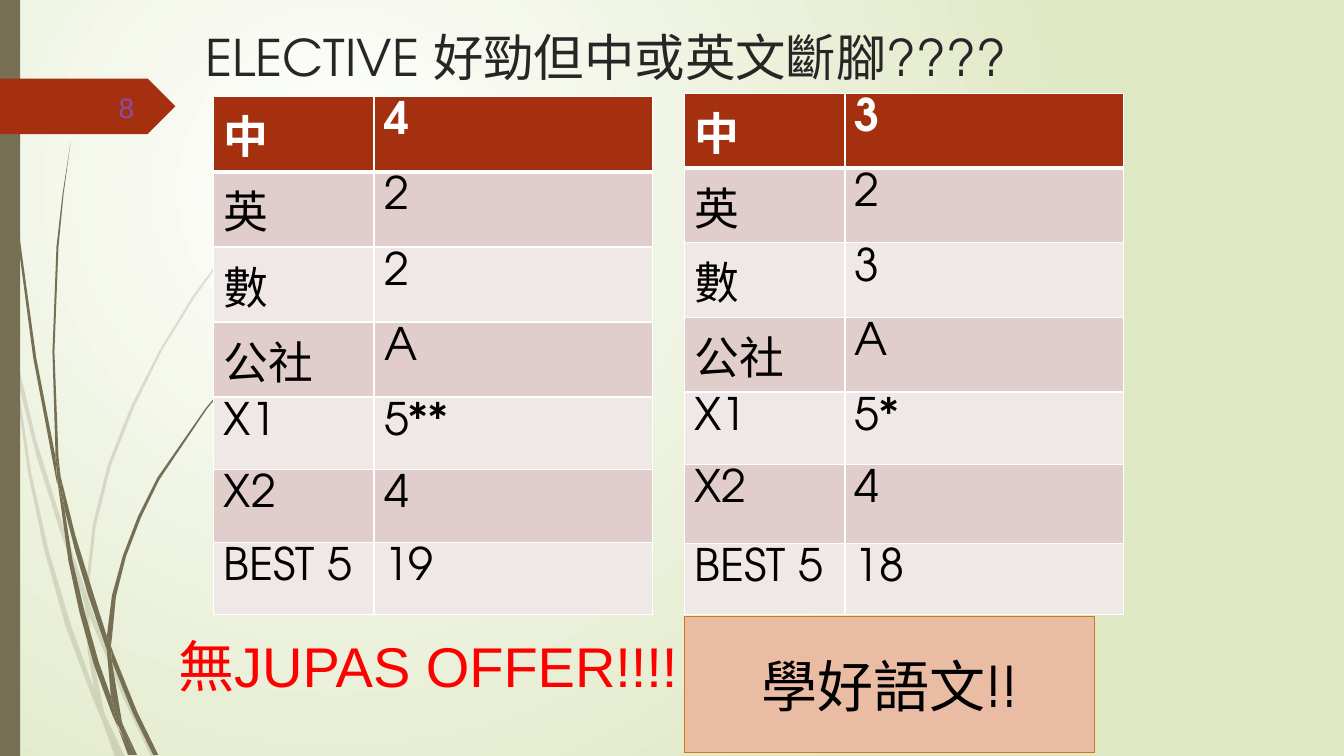
from dataclasses import dataclass

from lxml import etree
from pptx import Presentation
from pptx.dml.color import RGBColor
from pptx.enum.shapes import MSO_SHAPE
from pptx.enum.text import MSO_ANCHOR, PP_ALIGN
from pptx.oxml.ns import qn
from pptx.util import Inches, Pt

RECT, TAG = MSO_SHAPE.RECTANGLE, MSO_SHAPE.PENTAGON
TOP, MIDDLE = MSO_ANCHOR.TOP, MSO_ANCHOR.MIDDLE
LEFT, CENTER, RIGHT = PP_ALIGN.LEFT, PP_ALIGN.CENTER, PP_ALIGN.RIGHT


@dataclass(frozen=True)
class Theme:
    white: str = "FFFFFF"
    black: str = "000000"
    glow: str = "DFE8C4"
    stem: str = "766F54"
    rust: str = "A53010"
    dark: str = "E1CDCC"
    light: str = "F0E8E7"
    ink: str = "262626"
    purple: str = "874EA9"
    red: str = "FF0000"
    peach: str = "EBBCA4"
    orange: str = "D47817"
    head: str = "TeX Gyre Adventor"
    body: str = "Arial"
    big: int = 40
    title: int = 36
    cell: int = 32
    small: int = 20


T = Theme()

# Grass blades: corners of each outline
FAINT = [
    [(0.11, 3.5), (0.09, 3.22), (0, 2.82), (0, 2.99), (0.1, 3.44)],
    [(0.58, 5.22), (0.84, 5.99), (0.85, 5.86), (0.62, 5.2), (0.36, 4.37), (0.14, 3.45),
     (0.17, 3.76), (0.36, 4.52)],
    [(0.92, 6.07), (0.88, 5.96), (0.88, 6.1), (1.23, 6.94), (1.5, 7.51), (1.55, 7.51),
     (1.27, 6.92)],
    [(1.19, 7.51), (1.24, 7.51), (1.05, 7.11)],
    [(0.93, 6.83), (0.7, 6.19), (0.48, 5.45), (0.31, 4.69), (0.17, 3.76), (0.11, 3.5),
     (0.28, 4.7), (0.44, 5.46), (0.65, 6.21), (0.92, 6.93), (1.01, 7.14), (0.99, 7.07)],
    [(0.84, 5.99), (0.87, 6.46), (0.93, 6.83), (0.96, 6.92), (1.05, 7.11), (1.03, 7.06),
     (0.91, 6.46), (0.88, 6.08)],
    [(0.88, 5.84), (0.95, 5.22), (1.1, 4.62), (1.33, 4.04), (1.6, 3.49), (1.93, 2.95),
     (2.29, 2.45), (2.68, 1.98), (3.12, 1.54), (3.12, 1.53), (2.68, 1.97), (2.28, 2.44),
     (1.91, 2.94), (1.58, 3.48), (1.3, 4.03), (1.07, 4.61), (0.92, 5.21), (0.85, 5.84),
     (0.88, 5.96)],
    [(1.01, 7.14), (1.14, 7.51), (1.19, 7.51)],
    [(0.88, 6.08), (0.88, 5.96), (0.85, 5.86), (0.84, 5.99)],
    [(0.96, 6.92), (0.93, 6.83), (0.99, 7.07), (1.01, 7.14), (1.19, 7.51), (1.05, 7.11)],
]
BOLD = [
    [(0.07, 1.1), (0.17, 2.33), (0.33, 3.55), (0.56, 4.77), (0.57, 4.81), (0.55, 4.53),
     (0.36, 3.55), (0.19, 2.32), (0.08, 1.09), (0.05, 0.48), (0.04, 0), (0.03, 0),
     (0.04, 0.48)],
    [(0.88, 5.92), (1.06, 6.45), (1.06, 6.31), (0.93, 5.9), (0.75, 5.32), (0.6, 4.72),
     (0.64, 5.05), (0.75, 5.48)],
    [(1.13, 6.49), (1.1, 6.41), (1.11, 6.56), (1.32, 7.08), (1.52, 7.49), (1.57, 7.49),
     (1.36, 7.06)],
    [(1.1, 6.91), (0.98, 6.57), (0.84, 6.07), (0.72, 5.56), (0.64, 5.05), (0.57, 4.77),
     (0.68, 5.57), (0.79, 6.08), (0.93, 6.59), (1.11, 7.08), (1.17, 7.22), (1.16, 7.17)],
    [(0.6, 4.72), (0.58, 4.53), (0.54, 3.49), (0.58, 2.45), (0.63, 1.93), (0.7, 1.41),
     (0.62, 1.93), (0.56, 2.45), (0.52, 3.49), (0.55, 4.49)],
    [(1.33, 7.49), (1.36, 7.49), (1.22, 7.19)],
    [(0.57, 4.77), (0.64, 5.05), (0.6, 4.72), (0.55, 4.49), (0.55, 4.53)],
    [(1.11, 6.33), (1.15, 5.92), (1.25, 5.52), (1.4, 5.13), (1.58, 4.76), (2.05, 4.06),
     (2.31, 3.74), (2.61, 3.44), (2.6, 3.44), (2.31, 3.73), (2.04, 4.05), (1.56, 4.74),
     (1.37, 5.12), (1.22, 5.51), (1.11, 5.91), (1.06, 6.31), (1.1, 6.41)],
    [(1.17, 7.22), (1.27, 7.49), (1.31, 7.49)],
    [(1.06, 6.45), (1.1, 6.91), (1.16, 7.06), (1.22, 7.19), (1.21, 7.16), (1.11, 6.56),
     (1.09, 6.51)],
    [(1.06, 6.45), (1.11, 6.56), (1.1, 6.41), (1.06, 6.31)],
    [(1.16, 7.06), (1.1, 6.91), (1.16, 7.17), (1.3, 7.49), (1.33, 7.49), (1.22, 7.19)],
]

NAMES = ["中", "英", "數", "公社", "X1", "X2", "BEST 5"]
FIRST = ["4", "2", "2", "A", "5**", "4", "19"]
SECOND = ["3", "2", "3", "A", "5*", "4", "18"]


def rgb(color):
    return RGBColor.from_string(color)


def paint(shape, fill, line=None, alpha=None):
    shape.shadow.inherit = False
    shape.fill.solid()
    shape.fill.fore_color.rgb = rgb(fill)
    if alpha:
        clr = shape.fill._xPr.find(f"{qn('a:solidFill')}/{qn('a:srgbClr')}")
        etree.SubElement(clr, qn("a:alpha")).set("val", str(alpha * 1000))
    if line:
        shape.line.color.rgb = rgb(line)
        shape.line.width = Pt(0.75)
    else:
        shape.line.fill.background()


def write(frame, text, *, size, color, font=T.head, bold=False, align=LEFT, anchor=TOP):
    frame.word_wrap = True
    frame.vertical_anchor = anchor
    para = frame.paragraphs[0]
    para.alignment = align
    run = para.add_run()
    run.text = text
    run.font.size = Pt(size)
    run.font.name = font
    run.font.bold = bold
    run.font.color.rgb = rgb(color)


def add_text(slide, box, text, **look):
    area = slide.shapes.add_textbox(*map(Inches, box))
    write(area.text_frame, text, **look)


def add_box(slide, kind, box, fill, line=None):
    shape = slide.shapes.add_shape(kind, *map(Inches, box))
    paint(shape, fill, line)
    return shape


def add_blade(slide, edge, alpha=None):
    dots = [(Inches(x), Inches(y)) for x, y in edge]
    pen = slide.shapes.build_freeform(*dots[0])
    pen.add_line_segments(dots[1:], close=True)
    paint(pen.convert_to_shape(), T.stem, alpha=alpha)


def add_edges(cell, row):
    props = cell._tc.get_or_add_tcPr()
    widths = {"L": 1, "R": 1, "T": 3 if row == 1 else 1, "B": 3 if row == 0 else 1}
    for spot, (side, width) in enumerate(widths.items()):
        line = etree.Element(qn(f"a:ln{side}"), w=str(Pt(width)))
        fill = etree.SubElement(line, qn("a:solidFill"))
        etree.SubElement(fill, qn("a:srgbClr")).set("val", T.white)
        props.insert(spot, line)


def add_grades(slide, left, top, grades, rows):
    cols = [1.59, 2.76]
    box = map(Inches, (left, top, sum(cols), sum(rows)))
    table = slide.shapes.add_table(len(rows), len(cols), *box).table
    for col, width in zip(table.columns, cols):
        col.width = Inches(width)
    for row, pair in enumerate(zip(NAMES, grades)):
        table.rows[row].height = Inches(rows[row])
        head = row == 0
        fill = T.rust if head else (T.light, T.dark)[row % 2]
        for col, text in enumerate(pair):
            cell = table.cell(row, col)
            cell.fill.solid()
            cell.fill.fore_color.rgb = rgb(fill)
            add_edges(cell, row)
            write(cell.text_frame, text, size=T.cell, bold=head,
                  color=T.white if head else T.black)


def add_glow(slide):
    fill = slide.background.fill
    fill.gradient()
    for stop, (place, color) in zip(fill.gradient_stops, [(0, T.white), (1, T.glow)]):
        stop.position = place
        stop.color.rgb = rgb(color)
    grad = fill._xPr.find(qn("a:gradFill"))
    grad.remove(grad.find(qn("a:lin")))
    ring = etree.SubElement(grad, qn("a:path"), path="circle")
    etree.SubElement(ring, qn("a:fillToRect"), l="50000", t="50000", r="100000", b="100000")


def main():
    deck = Presentation()
    deck.slide_width, deck.slide_height = Inches(13.33), Inches(7.5)
    slide = deck.slides.add_slide(deck.slide_layouts[6])

    # Backdrop
    add_glow(slide)
    for edge in FAINT:
        add_blade(slide, edge, alpha=20)
    for edge in BOLD:
        add_blade(slide, edge)
    add_box(slide, RECT, (0, 0, 0.2, 7.5), T.stem)
    add_box(slide, TAG, (0, 0.78, 1.74, 0.55), T.rust)

    # Title, grade tables and page number
    add_text(slide, (1.94, 0.21, 9.06, 1.44), "ELECTIVE 好勁但中或英文斷腳????",
             size=T.title, color=T.ink)
    add_grades(slide, 2.12, 0.96, FIRST, [0.745] * 4 + [0.72] * 3)
    add_text(slide, (0.58, 0.86, 0.85, 0.4), "8", size=T.small, color=T.purple,
             font=T.body, align=RIGHT, anchor=MIDDLE)
    add_grades(slide, 6.79, 0.93, SECOND, [0.74] * 4 + [0.72, 0.78, 0.71])

    # Verdict and advice
    add_text(slide, (1.67, 6.22, 8.1, 0.77), "無JUPAS OFFER!!!!",
             size=T.big, color=T.red, font=T.body)
    advice = add_box(slide, RECT, (6.79, 6.12, 4.07, 1.35), T.peach, T.orange)
    write(advice.text_frame, "學好語文!!", size=T.big, color=T.black,
          align=CENTER, anchor=MIDDLE)

    deck.save("out.pptx")


if __name__ == "__main__":
    main()
